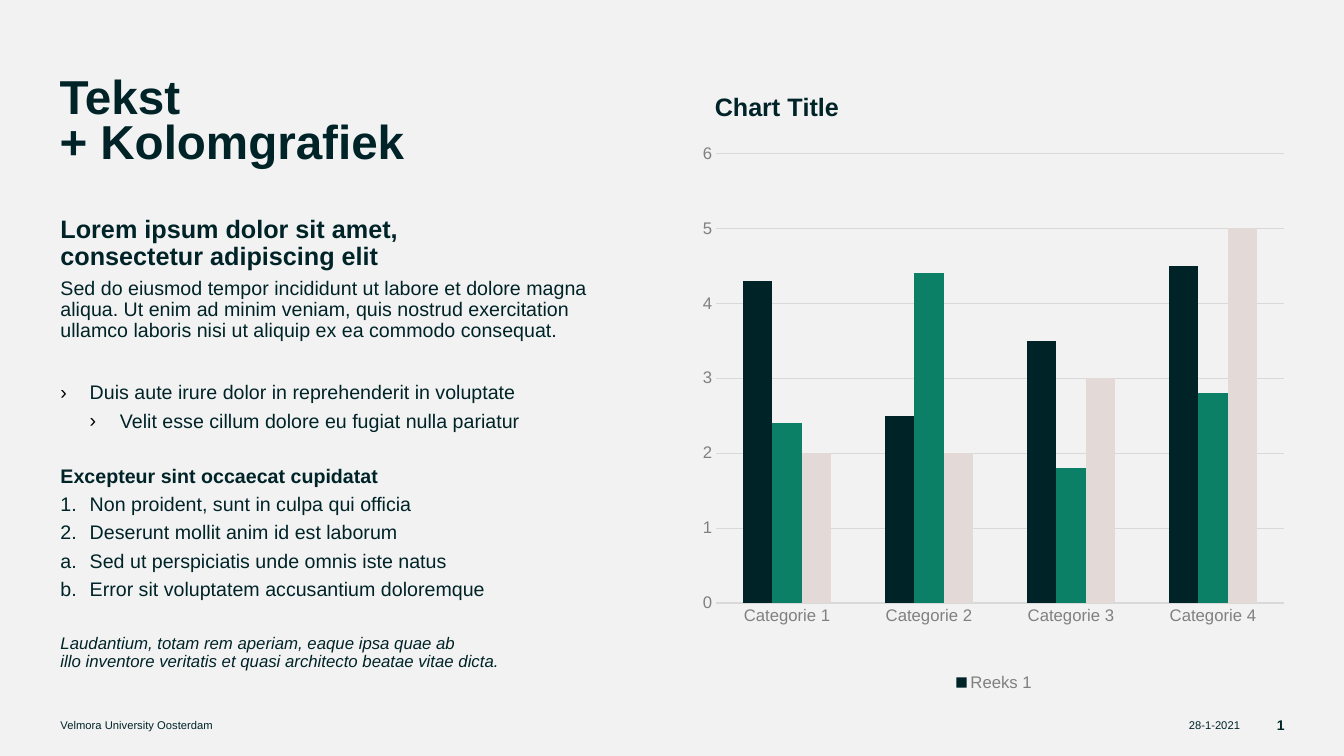
from lxml.etree import SubElement
from pptx import Presentation
from pptx.chart.data import CategoryChartData
from pptx.dml.color import RGBColor
from pptx.enum.chart import XL_CHART_TYPE, XL_LEGEND_POSITION, XL_TICK_MARK
from pptx.enum.text import MSO_ANCHOR, MSO_AUTO_SIZE, PP_ALIGN
from pptx.oxml import parse_xml
from pptx.oxml.ns import nsdecls, qn
from pptx.util import Inches, Pt

INK, GREEN, SAND = "002328", "0C8066", "E3DAD8"
GREY, RULE, PAPER = "808080", "D9D9D9", "F2F2F2"

BODY = [
    ("Lorem ipsum dolor sit amet,\vconsectetur adipiscing elit", dict(size=18, bold=True)),
    ("Sed do eiusmod tempor incididunt ut labore et dolore magna aliqua. "
     "Ut enim ad minim veniam, quis nostrud exercitation\v"
     "ullamco laboris nisi ut aliquip ex ea commodo consequat.", {}),
    ("Duis aute irure dolor in reprehenderit in voluptate",
     dict(before=29.5, marker="›", indent=0.29)),
    ("Velit esse cillum dolore eu fugiat nulla pariatur",
     dict(marker="›", indent=0.59, hang=0.3, level=1)),
    ("Excepteur sint occaecat cupidatat", dict(before=24.5, bold=True, level=5)),
    ("Non proident, sunt in culpa qui officia",
     dict(marker="arabicPeriod", indent=0.29, level=6)),
    ("Deserunt mollit anim id est laborum",
     dict(marker="arabicPeriod", indent=0.29, level=6)),
    ("Sed ut perspiciatis unde omnis iste natus",
     dict(marker="alphaLcPeriod", indent=0.29, level=7)),
    ("Error sit voluptatem accusantium doloremque",
     dict(marker="alphaLcPeriod", indent=0.29, level=7)),
    ("Laudantium, totam rem aperiam, eaque ipsa quae ab\v"
     "illo inventore veritatis et quasi architecto beatae vitae dicta.",
     dict(before=24.5, size=12, italic=True, level=8)),
]

SERIES = [
    ("Reeks 1", (4.3, 2.5, 3.5, 4.5), INK),
    ("Reeks 2", (2.4, 4.4, 1.8, 2.8), GREEN),
    ("Reeks 3", (2, 2, 3, 5), SAND),
]


def rgb(value):
    """Turn a hex string into a colour."""
    return RGBColor.from_string(value)


def set_font(font, size, color=INK, bold=False, italic=False):
    """Give a font its face, size, colour and style."""
    font.name, font.size, font.bold, font.italic = "Arial", Pt(size), bold, italic
    font.color.rgb = rgb(color)


def set_frame(frame, anchor=MSO_ANCHOR.TOP):
    """Remove the insets of a text frame and make it wrap."""
    frame.margin_left = frame.margin_right = frame.margin_top = frame.margin_bottom = 0
    frame.word_wrap = True
    frame.auto_size = MSO_AUTO_SIZE.NONE
    frame.vertical_anchor = anchor


def set_marker(para, marker, indent, hang):
    """Add a hanging bullet character or automatic number to a paragraph."""
    properties = para._p.get_or_add_pPr()
    properties.set("marL", str(Inches(indent)))
    properties.set("indent", str(-Inches(hang)))
    if marker == "›":
        color = SubElement(properties, qn("a:buClr"))
        SubElement(color, qn("a:srgbClr")).set("val", "000000")
        SubElement(properties, qn("a:buFont")).set("typeface", "Arial")
        SubElement(properties, qn("a:buChar")).set("char", marker)
    else:
        SubElement(properties, qn("a:buAutoNum")).set("type", marker)


def add_title(page, text):
    """Place and format the slide title."""
    title = page.shapes.title
    title.left, title.top = Inches(0.59), Inches(0.79)
    title.width, title.height = Inches(5.78), Inches(0.78)
    set_frame(title.text_frame)
    para = title.text_frame.paragraphs[0]
    para.text = text
    para.alignment = PP_ALIGN.LEFT
    para.line_spacing = Pt(32)
    set_font(para.font, 34, bold=True)


def add_paragraph(para, text, size=14, bold=False, italic=False, before=5,
                  marker=None, indent=0, hang=0.29, level=0):
    """Fill one paragraph of the body text."""
    para.text = text
    para.level = level
    para.line_spacing = 0.9
    para.space_before = Pt(before)
    set_font(para.font, size, bold=bold, italic=italic)
    if marker:
        set_marker(para, marker, indent, hang)
    else:
        para._p.get_or_add_pPr().set("marL", "0")


def add_body(page):
    """Add the text column."""
    box = page.shapes.add_textbox(Inches(0.6), Inches(2.15), Inches(5.77), Inches(4.75))
    frame = box.text_frame
    set_frame(frame)
    for index, (text, style) in enumerate(BODY):
        para = frame.add_paragraph() if index else frame.paragraphs[0]
        add_paragraph(para, text, **style)


def add_footer(page, text, left, width, align, size=8, bold=False):
    """Add one item of the footer line."""
    box = page.shapes.add_textbox(Inches(left), Inches(7.12), Inches(width), Inches(0.14))
    set_frame(box.text_frame, MSO_ANCHOR.MIDDLE)
    para = box.text_frame.paragraphs[0]
    para.text = text
    para.alignment = align
    set_font(para.font, size, bold=bold)


def set_layout(parent, position, **values):
    """Fix the place of a chart part, given in fractions of the chart."""
    for old in parent.findall(qn("c:layout")):
        parent.remove(old)
    layout = parse_xml(f"<c:layout {nsdecls('c')}><c:manualLayout/></c:layout>")
    for name, value in values.items():
        SubElement(layout[0], qn(f"c:{name}")).set("val", str(value))
    parent.insert(position, layout)


def style_axis(axis):
    """Set tick marks and label font of an axis."""
    axis.major_tick_mark = axis.minor_tick_mark = XL_TICK_MARK.NONE
    set_font(axis.tick_labels.font, 12, GREY)


def style_line(line):
    """Draw a chart line as a thin grey rule."""
    line.color.rgb = rgb(RULE)
    line.width = Pt(0.75)


def add_legend(chart):
    """Show a legend with only the first series."""
    chart.has_legend = True
    legend = chart.legend
    legend.position = XL_LEGEND_POSITION.BOTTOM
    legend.include_in_layout = False
    set_font(legend.font, 12, GREY)
    for index in range(1, len(SERIES)):
        legend._element.insert(index, parse_xml(
            f'<c:legendEntry {nsdecls("c")}><c:idx val="{index}"/>'
            '<c:delete val="1"/></c:legendEntry>'))


def add_column_chart(page):
    """Add the clustered column chart."""
    data = CategoryChartData()
    data.categories = [f"Categorie {number}" for number in range(1, 5)]
    for name, values, _ in SERIES:
        data.add_series(name, values)
    chart = page.shapes.add_chart(
        XL_CHART_TYPE.COLUMN_CLUSTERED, Inches(6.97), Inches(0.79),
        Inches(5.77), Inches(6.11), data).chart
    set_font(chart.font, 10, "000000")

    chart.has_title = True
    para = chart.chart_title.text_frame.paragraphs[0]
    para.text = "Chart Title"
    set_font(para.font, 18, bold=True)
    set_layout(chart.chart_title._element, 1, xMode="edge", yMode="edge", x=0.01, y=0.01)
    set_layout(chart._chartSpace.chart.plotArea, 0, layoutTarget="inner", xMode="edge",
               yMode="edge", x=0.02, y=0.12, w=0.98, h=0.73)

    plot = chart.plots[0]
    plot.gap_width, plot.overlap, plot.vary_by_categories = 182, 0, False
    for series, (_, _, color) in zip(plot.series, SERIES):
        series.format.fill.solid()
        series.format.fill.fore_color.rgb = rgb(color)

    style_axis(chart.category_axis)
    style_line(chart.category_axis.format.line)
    scale = chart.value_axis
    style_axis(scale)
    scale.minimum_scale, scale.maximum_scale, scale.major_unit = 0, 6, 1
    scale.format.line.fill.background()
    style_line(scale.major_gridlines.format.line)
    add_legend(chart)


def main():
    """Build and save the slide."""
    deck = Presentation()
    deck.slide_width, deck.slide_height = Inches(13.33), Inches(7.5)
    page = deck.slides.add_slide(deck.slide_layouts[5])
    page.background.fill.solid()
    page.background.fill.fore_color.rgb = rgb(PAPER)
    add_title(page, "Tekst\v+ Kolomgrafiek")
    add_body(page)
    add_footer(page, "Velmora University Oosterdam", 0.6, 10.79, PP_ALIGN.LEFT)
    add_footer(page, "28-1-2021", 11.54, 0.76, PP_ALIGN.RIGHT)
    add_footer(page, "1", 12.45, 0.29, PP_ALIGN.RIGHT, size=10, bold=True)
    add_column_chart(page)
    deck.save("out.pptx")


if __name__ == "__main__":
    main()
